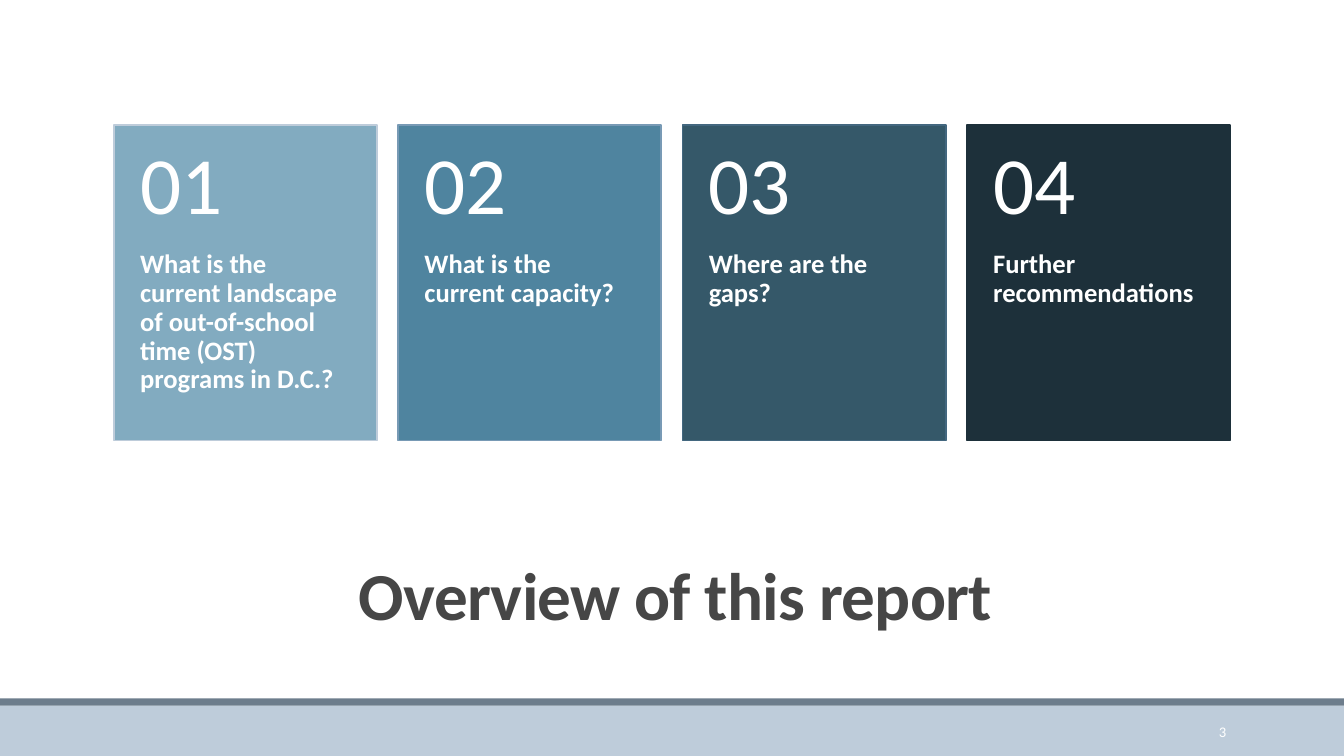
"""Build the report overview slide with four numbered section cards."""
from dataclasses import dataclass

import pptx
import pptx.dml.color
import pptx.enum.shapes
import pptx.enum.text
import pptx.slide
import pptx.util

Inches = pptx.util.Inches
Align = pptx.enum.text.PP_ALIGN
Anchor = pptx.enum.text.MSO_ANCHOR

COLORS = {
    "white": "FFFFFF",
    "title": "464646",
    "footer": "BECCDA",
    "footer_rule": "6D7D8C",
    "pale_blue": "82ABC0",
    "pale_edge": "BECCDA",
    "blue": "4F849F",
    "blue_edge": "789AB5",
    "slate": "355869",
    "slate_edge": "43677F",
    "navy": "1D303A",
}

SLIDE_WIDTH, SLIDE_HEIGHT = 13.33, 7.5
CARD_LEFT, CARD_TOP = 1.13, 1.24
CARD_WIDTH, CARD_HEIGHT = 2.61, 3.13
CARD_STEP = 2.82
NUMBER_HEIGHT = 1.25


@dataclass(frozen=True)
class Card:
    question: str
    fill: str
    edge: str


CARDS = [
    Card("What is the current landscape of out-of-school time (OST) programs in D.C.?",
         "pale_blue", "pale_edge"),
    Card("What is the current capacity?", "blue", "blue_edge"),
    Card("Where are the gaps?", "slate", "slate_edge"),
    Card("Further recommendations", "navy", "navy"),
]


def rgb(name: str) -> pptx.dml.color.RGBColor:
    return pptx.dml.color.RGBColor.from_string(COLORS[name])


def add_panel(page: pptx.slide.Slide, left: float, top: float, width: float,
              height: float, fill: str, edge: str | None = None) -> None:
    panel = page.shapes.add_shape(
        pptx.enum.shapes.MSO_SHAPE.RECTANGLE,
        Inches(left), Inches(top), Inches(width), Inches(height))
    panel.shadow.inherit = False
    panel.fill.solid()
    panel.fill.fore_color.rgb = rgb(fill)
    if edge:
        panel.line.color.rgb = rgb(edge)
        panel.line.width = pptx.util.Pt(1.25)
    else:
        panel.line.fill.background()


def add_text(page: pptx.slide.Slide, text: str, left: float, top: float,
             width: float, height: float, *, size: float, color: str = "white",
             bold: bool = False, align: Align = Align.LEFT,
             anchor: Anchor = Anchor.MIDDLE, line_spacing: float = 1.0,
             insets: tuple[float, float, float, float] = (0.1, 0.05, 0.1, 0.05),
             tracking: float = 0) -> None:
    box = page.shapes.add_textbox(
        Inches(left), Inches(top), Inches(width), Inches(height))
    frame = box.text_frame
    frame.word_wrap = True
    frame.vertical_anchor = anchor
    (frame.margin_left, frame.margin_top,
     frame.margin_right, frame.margin_bottom) = map(Inches, insets)
    para = frame.paragraphs[0]
    para.alignment = align
    para.line_spacing = line_spacing
    span = para.add_run()
    span.text = text
    span.font.name = "Calibri"
    span.font.size = pptx.util.Pt(size)
    span.font.bold = bold
    span.font.color.rgb = rgb(color)
    if tracking:
        span._r.get_or_add_rPr().set("spc", str(round(tracking * 100)))


def add_card(page: pptx.slide.Slide, index: int, card: Card) -> None:
    left = CARD_LEFT + index * CARD_STEP
    add_panel(page, left, CARD_TOP, CARD_WIDTH, CARD_HEIGHT, card.fill, card.edge)
    add_text(page, card.question, left, CARD_TOP + NUMBER_HEIGHT, CARD_WIDTH,
             CARD_HEIGHT - NUMBER_HEIGHT, size=19, bold=True, anchor=Anchor.TOP,
             line_spacing=0.9, insets=(0.26, 0, 0.26, 0.36))
    add_text(page, f"{index + 1:02}", left, CARD_TOP, CARD_WIDTH, NUMBER_HEIGHT,
             size=58, line_spacing=0.9, insets=(0.26, 0.18, 0.26, 0.18))


def main() -> None:
    deck = pptx.Presentation()
    deck.slide_width, deck.slide_height = Inches(SLIDE_WIDTH), Inches(SLIDE_HEIGHT)
    page = deck.slides.add_slide(deck.slide_layouts[6])
    add_panel(page, 0, 7, SLIDE_WIDTH, 0.5, "footer")
    add_panel(page, 0, 6.93, SLIDE_WIDTH, 0.07, "footer_rule")
    add_text(page, "Overview of this report", 1.2, 5.3, 11, 1.3, size=48,
             color="title", bold=True, align=Align.CENTER, line_spacing=0.85,
             tracking=-0.5)
    for index, card in enumerate(CARDS):
        add_card(page, index, card)
    add_text(page, "3", 10.83, 7.06, 1.43, 0.4, size=10.5, align=Align.RIGHT)
    deck.save("out.pptx")


if __name__ == "__main__":
    main()
